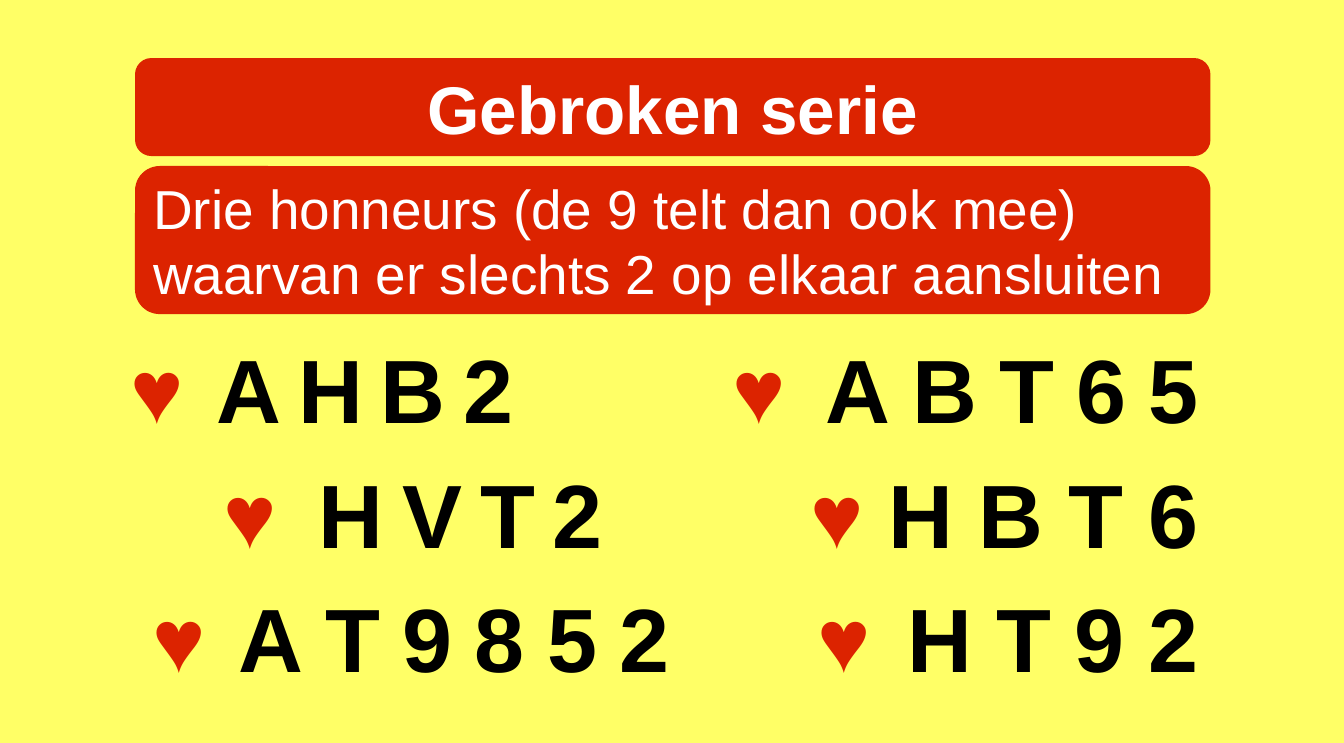
from lxml.etree import SubElement
from pptx import Presentation
from pptx.dml.color import RGBColor
from pptx.enum.shapes import MSO_SHAPE as Preset
from pptx.enum.text import MSO_ANCHOR as Anchor, MSO_AUTO_SIZE as AutoSize, PP_ALIGN as Align
from pptx.oxml.ns import qn
from pptx.util import Inches, Pt

PX = 914400 / 89.8
RED, YELLOW, WHITE, BLACK = "DC2300", "FFFF66", "FFFFFF", "000000"


def px(length):
    return round(length * PX)


def write_text(shape, lines, size, color, bold=False, align=Align.LEFT,
               anchor=Anchor.TOP, wrap=False, fit=AutoSize.NONE):
    frame = shape.text_frame
    frame.text = "\n".join(lines)
    frame.word_wrap, frame.auto_size, frame.vertical_anchor = wrap, fit, anchor
    frame.margin_left = frame.margin_right = px(11)
    frame.margin_top = frame.margin_bottom = px(5)
    for paragraph in frame.paragraphs:
        paragraph.alignment = align
        paragraph.space_before = Pt(0)
        font = paragraph.runs[0].font
        font.name, font.size, font.bold = "Arial", Pt(size), bold
        font.color.rgb = RGBColor.from_string(color)


presentation = Presentation()
presentation.slide_width, presentation.slide_height = Inches(14.96), Inches(8.27)
slide = presentation.slides.add_slide(presentation.slide_layouts[1])
slide.background.fill.solid()
slide.background.fill.fore_color.rgb = RGBColor.from_string(YELLOW)

# Title on its rounded panel
title, explanation = slide.placeholders
title_panel = slide.shapes.add_shape(Preset.ROUNDED_RECTANGLE, 0, 0, 0, 0)
title_panel.shadow.inherit = False
title_panel.line.fill.background()
title._element.addprevious(title_panel._element)
write_text(title, ["Gebroken serie"], 54, WHITE, bold=True,
           align=Align.CENTER, anchor=Anchor.MIDDLE)

# Explanation, rounded and without bullets
write_text(explanation,
           ["Drie honneurs (de 9 telt dan ook mee)",
            "waarvan er slechts 2 op elkaar aansluiten"],
           44, WHITE, anchor=Anchor.MIDDLE, wrap=True)
for paragraph in explanation.text_frame.paragraphs:
    properties = paragraph._p.get_or_add_pPr()
    properties.set("marL", "0")
    properties.set("indent", "0")
    SubElement(properties, qn("a:buNone"))

# Places and fills of the heading parts
for part, top, height in ((title_panel, 58, 98), (title, 58, 98), (explanation, 166, 148)):
    part.left, part.top, part.width, part.height = px(135), px(top), px(1075), px(height)
for panel in (title_panel, explanation):
    panel.fill.solid()
    panel.fill.fore_color.rgb = RGBColor.from_string(RED)
outline = explanation._element.spPr.find(qn("a:xfrm"))
geometry = SubElement(explanation._element.spPr, qn("a:prstGeom"), prst="roundRect")
SubElement(geometry, qn("a:avLst"))
outline.addnext(geometry)

# Card holdings: row, cards, left edge of each card
holdings = [
    (0, "♥AHB2", (119, 205, 287, 369, 452)),
    (1, "♥HVT2", (212, 307, 391, 469, 541)),
    (2, "♥AT9852", (141, 227, 314, 391, 463, 536, 608)),
    (0, "♥ABT65", (721, 814, 901, 988, 1065, 1137)),
    (1, "♥HBT6", (799, 877, 967, 1057, 1137)),
    (2, "♥HT92", (806, 896, 985, 1063, 1137)),
]
card_widths = {"♥": 75, "A": 87, "H": 87, "B": 87, "V": 82, "T": 77}
DIGIT_WIDTH = 72

for row, cards, lefts in holdings:
    for card, left in zip(cards, lefts):
        width = card_widths.get(card, DIGIT_WIDTH)
        box = slide.shapes.add_textbox(px(left), px(329 + 124 * row), px(width), px(120))
        write_text(box, [card], 72, RED if card == "♥" else BLACK, bold=True,
                   fit=AutoSize.SHAPE_TO_FIT_TEXT)

presentation.save("out.pptx")
